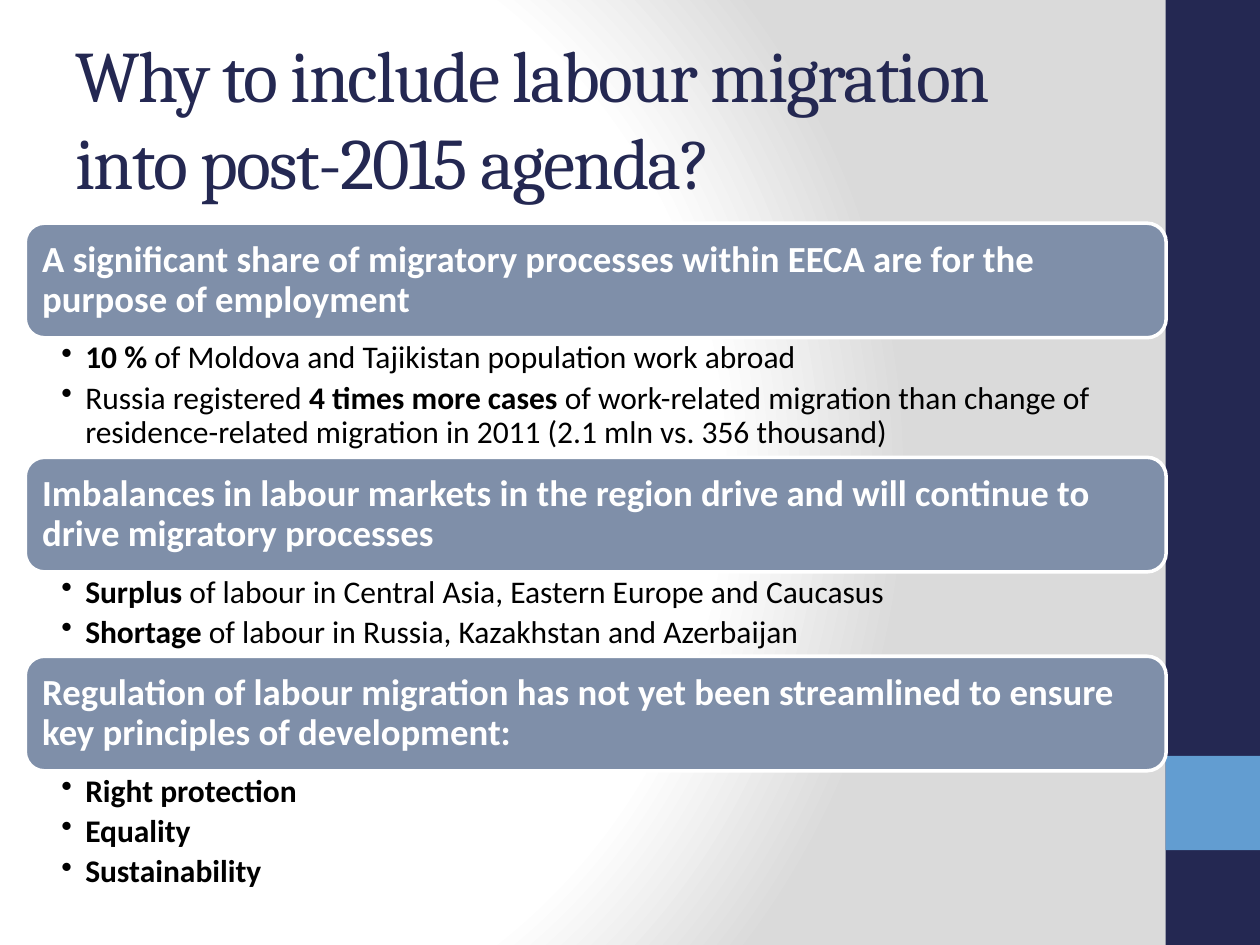
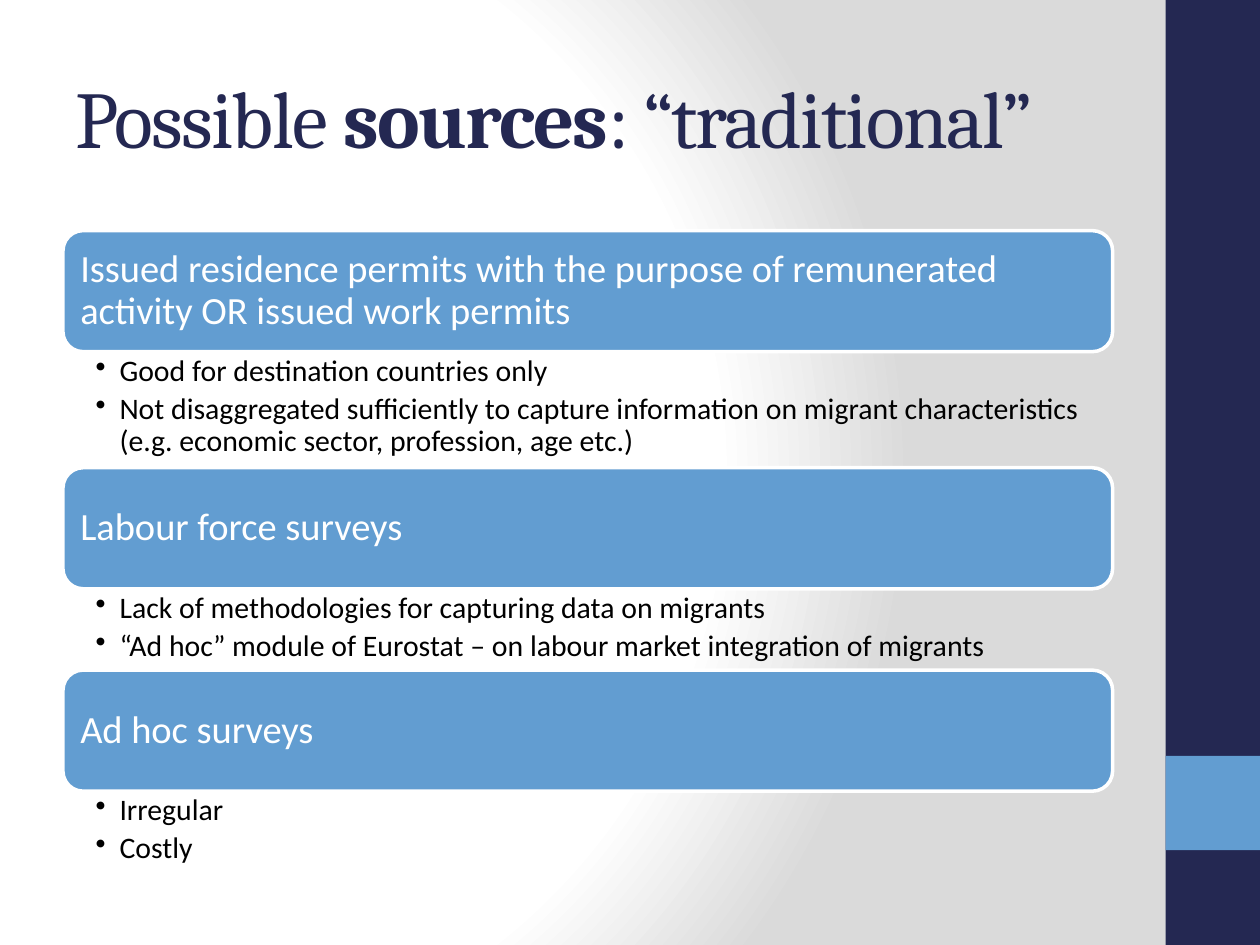
import lxml.etree
import pptx
import pptx.dml.color
import pptx.enum.shapes
import pptx.enum.text
import pptx.oxml
import pptx.oxml.ns
import pptx.util

Cm = pptx.util.Cm
Pt = pptx.util.Pt
RGBColor = pptx.dml.color.RGBColor
SHAPE = pptx.enum.shapes.MSO_SHAPE
ALIGN = pptx.enum.text.PP_ALIGN
ANCHOR = pptx.enum.text.MSO_ANCHOR
qn = pptx.oxml.ns.qn

NAVY = RGBColor(0x24, 0x28, 0x52)
SKY = RGBColor(0x62, 0x9D, 0xD1)
SLATE = RGBColor(0x7F, 0x8F, 0xA9)
WHITE = RGBColor(0xFF, 0xFF, 0xFF)
GREY = RGBColor(0xDA, 0xDA, 0xDA)
BLACK = RGBColor(0, 0, 0)

TITLE_FONT, BODY_FONT = "Cambria", "Calibri"
PAGE_WIDTH, PAGE_HEIGHT = Cm(25.4), Cm(19.05)
SIDEBAR_WIDTH = Cm(1.9)
BULLET_INDENT = Cm(0.48)

BACKGROUND_STOPS = [(0, WHITE), (75, WHITE), (100, GREY)]

# Double asterisks enclose bold words
WHY_TITLE = "Why to include labour migration into post-2015 agenda?"
WHY_SECTIONS = [
    ("**A significant share of migratory processes within EECA are for the purpose of employment**",
     Cm(2.41),
     ["**10 % **of Moldova and Tajikistan population work abroad",
      "Russia registered **4 times more cases **of work-related migration than change of "
      "residence-related migration in 2011 (2.1 mln vs. 356 thousand)"]),
    ("**Imbalances in labour markets in the region drive and will continue to drive migratory processes**",
     Cm(1.7),
     ["**Surplus** of labour in Central Asia, Eastern Europe and Caucasus",
      "**Shortage** of labour in Russia, Kazakhstan and Azerbaijan"]),
    ("**Regulation of labour migration has not yet been streamlined to ensure "
     "key principles of development:**",
     Cm(2.54),
     ["**Right protection**", "**Equality**", "**Sustainability**"]),
]
WHY_STYLE = {"fill": SLATE, "heading_height": Cm(2.31), "heading_size": 21,
             "list_size": 18, "list_left": Cm(0.73), "list_right": Cm(0.36)}

SOURCES_TITLE = "Possible **sources**: “traditional”"
SOURCES_SECTIONS = [
    ("Issued residence permits with the purpose of remunerated activity OR issued work permits",
     Cm(2.34),
     ["Good for destination countries only",
      "Not disaggregated sufficiently to capture information on migrant characteristics "
      "(e.g. economic sector, profession, age etc.)"]),
    ("Labour force surveys",
     Cm(1.64),
     ["Lack of methodologies for capturing data on migrants",
      "“Ad hoc” module of Eurostat – on labour market integration of migrants"]),
    ("Ad hoc surveys", Cm(1.64), ["Irregular", "Costly"]),
]
SOURCES_STYLE = {"fill": SKY, "heading_height": Cm(2.44), "heading_size": 22,
                 "list_size": 17, "list_left": Cm(0.66), "list_right": Cm(0.43)}


def set_all(target, values):
    for name, value in values.items():
        setattr(target, name, value)


def set_frame(box, margins, anchor):
    frame = box.text_frame
    left, top, right, bottom = margins
    set_all(frame, {"word_wrap": True, "vertical_anchor": anchor,
                    "margin_left": left, "margin_top": top,
                    "margin_right": right, "margin_bottom": bottom})
    return frame


def write_spans(para, text, size, color, font=BODY_FONT, tracking=None):
    for index, piece in enumerate(text.split("**")):
        if not piece:
            continue
        span = para.add_run()
        span.text = piece
        set_all(span.font, {"name": font, "size": Pt(size), "bold": index % 2 == 1})
        span.font.color.rgb = color
        if tracking is not None:
            span.font._element.set("spc", str(tracking))


def add_bullet(para):
    properties = para._p.get_or_add_pPr()
    properties.set("marL", str(BULLET_INDENT))
    properties.set("indent", str(-BULLET_INDENT))
    lxml.etree.SubElement(properties, qn("a:buChar")).set("char", "•")


def add_panel(page, kind, place, fill):
    panel = page.shapes.add_shape(kind, *place)
    panel.shadow.inherit = False
    panel.fill.solid()
    panel.fill.fore_color.rgb = fill
    panel.line.fill.background()
    return panel


def set_background(master):
    """Radial fade shared by every slide."""
    master.background.fill.gradient()
    linear = master.element.find(".//" + qn("p:bgPr") + "/" + qn("a:gradFill"))
    stops = "".join(f'<a:gs pos="{percent * 1000}"><a:srgbClr val="{color}"/></a:gs>'
                    for percent, color in BACKGROUND_STOPS)
    radial = pptx.oxml.parse_xml(
        f'<a:gradFill {pptx.oxml.ns.nsdecls("a")} rotWithShape="1"><a:gsLst>{stops}</a:gsLst>'
        '<a:path path="circle"><a:fillToRect l="20000" t="50000" r="100000" b="50000"/></a:path>'
        '</a:gradFill>')
    linear.getparent().replace(linear, radial)


def add_sidebar(page, left, width):
    add_panel(page, SHAPE.RECTANGLE, (left, 0, width, PAGE_HEIGHT), NAVY)
    add_panel(page, SHAPE.RECTANGLE, (left, Cm(15.24), width, width), SKY)


def add_title(page, text, size):
    box = page.shapes.add_textbox(Cm(1.27), Cm(0.76), Cm(21.16), Cm(3.18))
    frame = set_frame(box, (Cm(0.25), Cm(0.13), Cm(0.25), Cm(0.13)), ANCHOR.MIDDLE)
    write_spans(frame.paragraphs[0], text, size, NAVY, TITLE_FONT, tracking=-100)


def add_heading(page, place, text, style):
    panel = add_panel(page, SHAPE.ROUNDED_RECTANGLE, place, style["fill"])
    panel.line.color.rgb = WHITE
    panel.line.width = Pt(2)
    frame = set_frame(panel, [Cm(0.23)] * 4, ANCHOR.MIDDLE)
    para = frame.paragraphs[0]
    set_all(para, {"alignment": ALIGN.LEFT, "line_spacing": 0.9})
    write_spans(para, text, style["heading_size"], WHITE)


def add_list(page, place, items, style):
    box = page.shapes.add_textbox(*place)
    margins = (style["list_left"], Cm(0.08), style["list_right"], Cm(0.08))
    frame = set_frame(box, margins, ANCHOR.TOP)
    for index, item in enumerate(items):
        para = frame.add_paragraph() if index else frame.paragraphs[0]
        add_bullet(para)
        set_all(para, {"line_spacing": 0.9, "space_after": Pt(0.2 * style["list_size"])})
        write_spans(para, item, style["list_size"], BLACK)


def add_sections(page, left, top, width, sections, style):
    """Stack headings and their lists downwards without gaps."""
    for heading, list_height, items in sections:
        add_heading(page, (left, top, width, style["heading_height"]), heading, style)
        top += style["heading_height"]
        add_list(page, (left, top, width, list_height), items, style)
        top += list_height


def add_page(deck, title, title_size, area, sections, style):
    page = deck.slides.add_slide(deck.slide_layouts[6])
    add_sidebar(page, PAGE_WIDTH - SIDEBAR_WIDTH, SIDEBAR_WIDTH)
    add_title(page, title, title_size)
    add_sections(page, *area, sections, style)


def main():
    deck = pptx.Presentation()
    set_all(deck, {"slide_width": PAGE_WIDTH, "slide_height": PAGE_HEIGHT})
    set_background(deck.slide_master)
    add_page(deck, WHY_TITLE, 41.4, (Cm(0.51), Cm(4.5), Cm(23)), WHY_SECTIONS, WHY_STYLE)
    add_page(deck, SOURCES_TITLE, 46, (Cm(1.27), Cm(4.65), Cm(21.16)),
             SOURCES_SECTIONS, SOURCES_STYLE)
    deck.save("out.pptx")


if __name__ == "__main__":
    main()
